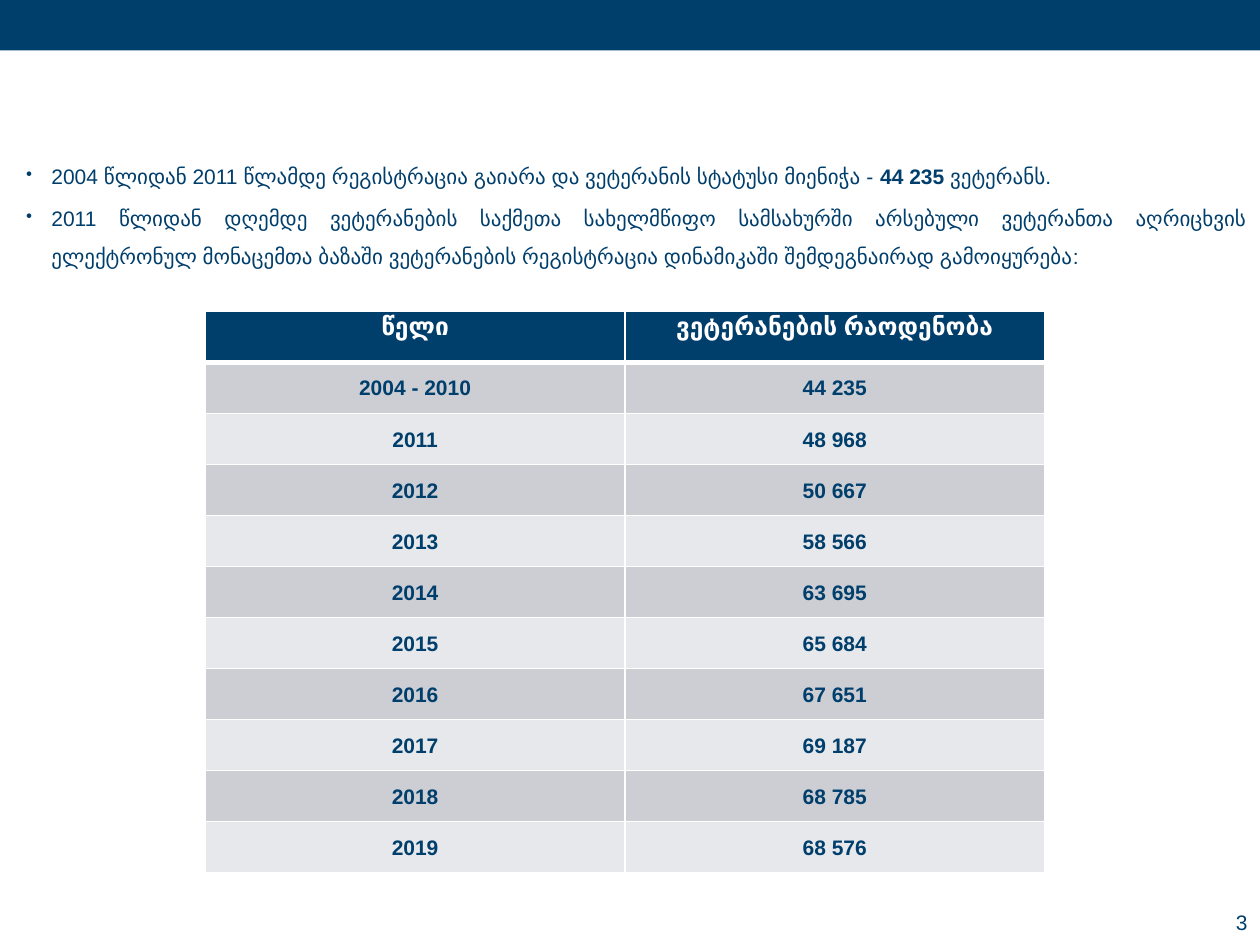
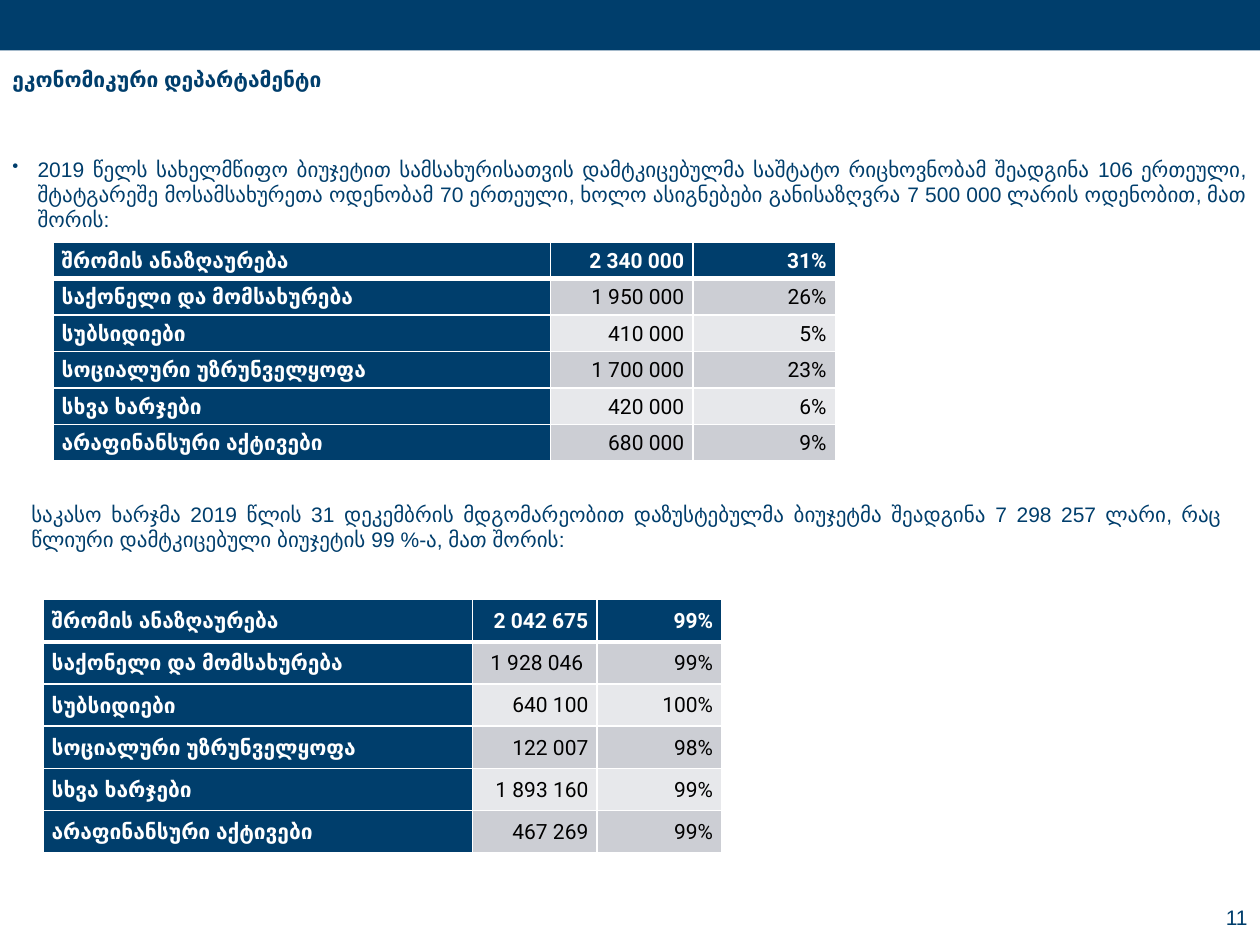
from lxml import etree
from pptx import Presentation
from pptx.dml.color import RGBColor
from pptx.enum.shapes import MSO_SHAPE
from pptx.enum.text import MSO_ANCHOR, PP_ALIGN
from pptx.oxml.ns import qn
from pptx.util import Inches, Pt

RECT = MSO_SHAPE.RECTANGLE
LEFT, MID, RIGHT, JUST = PP_ALIGN.LEFT, PP_ALIGN.CENTER, PP_ALIGN.RIGHT, PP_ALIGN.JUSTIFY
TOP, CENTER = MSO_ANCHOR.TOP, MSO_ANCHOR.MIDDLE

NAVY, WHITE, BLACK = "003E6C", "FFFFFF", "000000"
BANDS = ("CCCED4", "E7E8EB")
SANS, DIGIT = "Arial", "Roboto"


def color(code):
    return RGBColor.from_string(code)


def child(parent, tag, **attrs):
    return etree.SubElement(parent, qn(tag), attrs)


def bullet(para):
    props = para._p.get_or_add_pPr()
    props.set("marL", str(Inches(0.2)))
    props.set("indent", str(-Inches(0.2)))
    child(child(props, "a:buClr"), "a:srgbClr", val=NAVY)
    child(props, "a:buSzPct", val="85000")
    child(props, "a:buChar", char="•")


def border(cell, **widths):
    """Draw white cell edges; widths in points by side name."""
    props = cell._tc.get_or_add_tcPr()
    for place, side in enumerate("LRTB"):
        line = etree.Element(qn(f"a:ln{side}"), w=str(Pt(widths.get(side, 1))))
        child(child(line, "a:solidFill"), "a:srgbClr", val=WHITE)
        props.insert(place, line)


class Deck:
    def __init__(self):
        self.show = Presentation()
        self.show.slide_width, self.show.slide_height = Inches(10), Inches(7.5)
        self.slide = None

    def page(self, number, top):
        """Start a slide with its top band and page number."""
        self.slide = self.show.slides.add_slide(self.show.slide_layouts[6])
        band = self.slide.shapes.add_shape(RECT, 0, 0, Inches(10), Inches(0.4))
        band.shadow.inherit = False
        band.fill.solid()
        band.fill.fore_color.rgb = color(NAVY)
        band.line.fill.background()
        self.text([[number]], 8.83, top, 1.17, 0.36, align=RIGHT, anchor=CENTER)

    def style(self, run, size=12, ink=NAVY, bold=False, face=SANS):
        font = run.font
        font.name, font.size, font.bold = face, Pt(size), bold
        font.color.rgb = color(ink)

    def text(self, paras, left, top, width, height, align=JUST, anchor=TOP,
             bold=False, dots=False, space=1.0):
        """Each paragraph is a list of runs; every second run is emphasised."""
        box = self.slide.shapes.add_textbox(
            Inches(left), Inches(top), Inches(width), Inches(height))
        frame = box.text_frame
        frame.word_wrap, frame.vertical_anchor = True, anchor
        for i, parts in enumerate(paras):
            para = frame.add_paragraph() if i else frame.paragraphs[0]
            if dots:
                bullet(para)
            para.alignment, para.line_spacing = align, space
            if i:
                para.space_before = Pt(2.4)
            para.text = parts[0]
            for part in parts[1:]:
                para.add_run().text = part
            for j, run in enumerate(para.runs):
                self.style(run, bold=bold or j % 2 == 1)

    def cell(self, cell, text, fill, align, space, anchor=CENTER, **font):
        cell.fill.solid()
        cell.fill.fore_color.rgb = color(fill)
        cell.margin_left = cell.margin_right = Inches(0.07)
        cell.margin_top = cell.margin_bottom = 0
        cell.vertical_anchor = anchor
        para = cell.text_frame.paragraphs[0]
        para.text = text
        para.alignment, para.line_spacing = align, space
        self.style(para.runs[0], **font)

    def grid(self, rows, left, top, cols, height):
        frame = self.slide.shapes.add_table(
            len(rows), len(cols), Inches(left), Inches(top),
            Inches(sum(cols)), Inches(height))
        table = frame.table
        for col, width in zip(table.columns, cols):
            col.width = Inches(width)
        for row in table.rows:
            row.height = Inches(height / len(rows))
        for r, row in enumerate(rows):
            for c, text in enumerate(row):
                yield r, c, text, table.cell(r, c)
                border(table.cell(r, c), T=3 if r == 1 else 1, B=1 if r else 3)

    def counts(self, rows, *place):
        """Centred table with a header row."""
        for r, _, text, cell in self.grid(rows, *place):
            if r:
                self.cell(cell, text, BANDS[(r - 1) % 2], MID, 1.07, bold=True)
            else:
                self.cell(cell, text, NAVY, MID, 1.07, TOP,
                          size=14, ink=WHITE, bold=True)

    def budget(self, rows, *place):
        """Table with dark labels at the left and a dark first row."""
        for r, c, text, cell in self.grid(rows, *place):
            dark = r == 0 or c == 0
            self.cell(cell, text, NAVY if dark else BANDS[(r - 1) % 2],
                      RIGHT if c else LEFT, 1.05, ink=WHITE if dark else BLACK,
                      bold=dark, face=DIGIT if c else SANS)


YEARS = [
    ("წელი", "ვეტერანების რაოდენობა"),
    ("2004 - 2010", "44 235"),
    ("2011", "48 968"),
    ("2012", "50 667"),
    ("2013", "58 566"),
    ("2014", "63 695"),
    ("2015", "65 684"),
    ("2016", "67 651"),
    ("2017", "69 187"),
    ("2018", "68 785"),
    ("2019", "68 576"),
]
ITEMS = ("შრომის ანაზღაურება", "საქონელი და მომსახურება", "სუბსიდიები",
         "სოციალური უზრუნველყოფა", "სხვა ხარჯები", "არაფინანსური აქტივები")
PLAN = (("2 340 000", "1 950 000", "410 000", "1 700 000", "420 000", "680 000"),
        ("31%", "26%", "5%", "23%", "6%", "9%"))
SPENT = (("2 042 675", "1 928 046 ", "640 100", "122 007", "1 893 160", "467 269"),
         ("99%", "99%", "100%", "98%", "99%", "99%"))


def main():
    deck = Deck()

    # Registered veterans by year
    deck.page("3", 7.14)
    deck.text([
        ["2004 წლიდან 2011 წლამდე რეგისტრაცია გაიარა და ვეტერანის სტატუსი მიენიჭა - ",
         "44 235", " ვეტერანს."],
        ["2011 წლიდან დღემდე ვეტერანების საქმეთა სახელმწიფო სამსახურში არსებული "
         "ვეტერანთა აღრიცხვის ელექტრონულ მონაცემთა ბაზაში ვეტერანების რეგისტრაცია "
         "დინამიკაში შემდეგნაირად გამოიყურება:"],
    ], 0.11, 1.15, 9.89, 1.1, dots=True, space=1.5)
    deck.counts(YEARS, 1.63, 2.47, (3.33, 3.33), 4.46)

    # Budget of the economic department
    deck.page("11", 7.1)
    deck.text([["ეკონომიკური დეპარტამენტი"]], 0, 0.48, 10, 0.3, align=LEFT, bold=True)
    deck.text([[
        "2019 წელს სახელმწიფო ბიუჯეტით სამსახურისათვის დამტკიცებულმა საშტატო "
        "რიცხოვნობამ შეადგინა 106 ერთეული, შტატგარეშე მოსამსახურეთა ოდენობამ "
        "70 ერთეული, ხოლო ასიგნებები განისაზღვრა 7 500 000 ლარის ოდენობით, "
        "მათ შორის:"]], 0, 1.19, 10, 0.7, dots=True)
    deck.budget(list(zip(ITEMS, *PLAN)), 0.42, 1.92, (3.95, 1.13, 1.13), 1.74)
    deck.text([[
        "საკასო ხარჯმა 2019 წლის 31 დეკემბრის მდგომარეობით დაზუსტებულმა ბიუჯეტმა "
        "შეადგინა 7 298 257 ლარი, რაც წლიური დამტკიცებული ბიუჯეტის 99 %-ა, "
        "მათ შორის:"]], 0.15, 3.93, 9.65, 0.5)
    deck.budget(list(zip(ITEMS, *SPENT)), 0.34, 4.76, (3.41, 0.99, 0.99), 2.01)

    deck.show.save("out.pptx")


if __name__ == "__main__":
    main()
